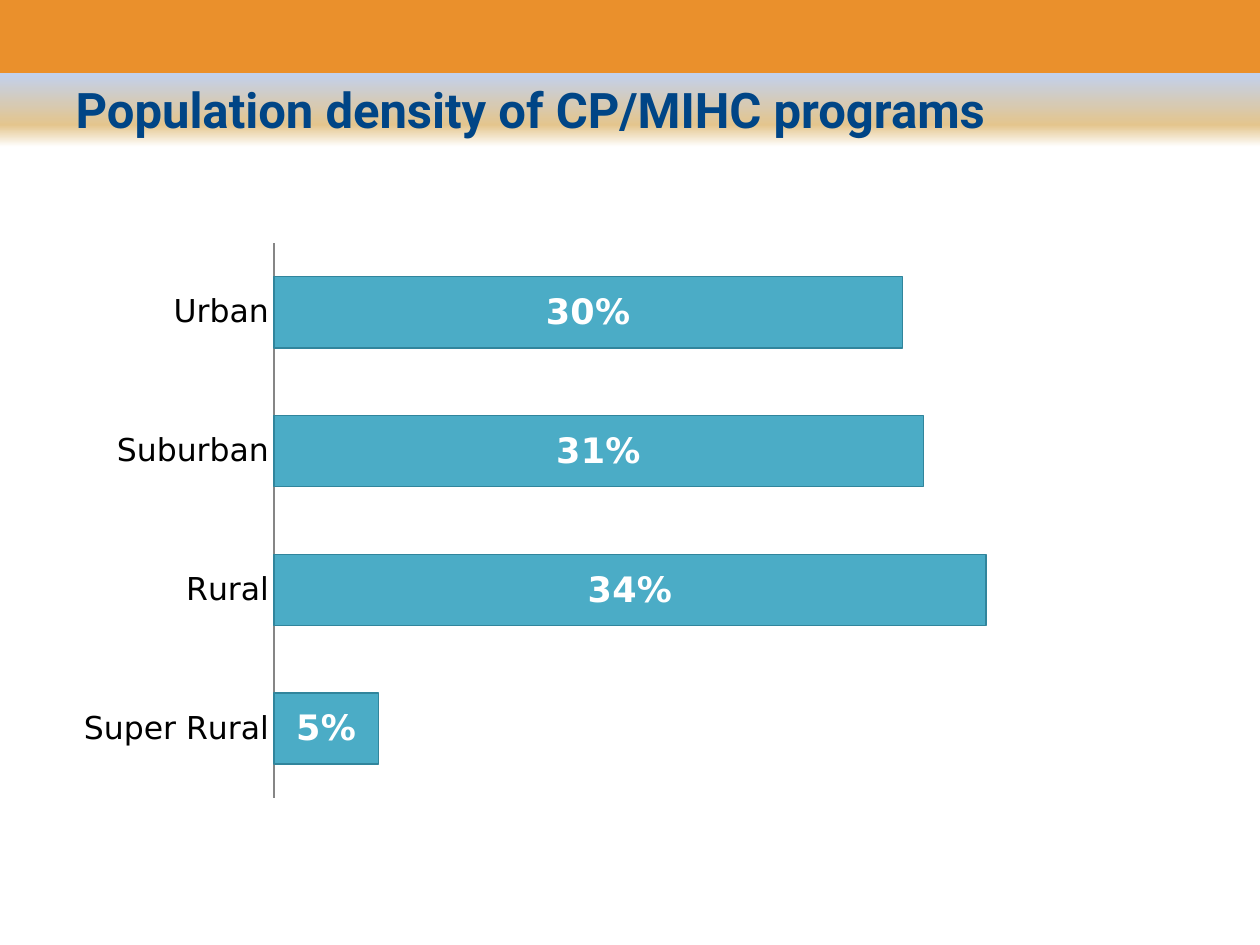
import lxml.etree
import pptx
import pptx.chart.data
import pptx.dml.color
import pptx.enum.chart
import pptx.enum.shapes
import pptx.enum.text
import pptx.oxml.ns
import pptx.util

EMU_PER_PX = 914400 / 126
SLIDE_WIDTH, SLIDE_HEIGHT = 1260, 945


def px(length):
    return pptx.util.Emu(round(length * EMU_PER_PX))


def color(hex_string):
    return pptx.dml.color.RGBColor.from_string(hex_string)


def add_child(parent, tag, **attributes):
    child = lxml.etree.SubElement(parent, pptx.oxml.ns.qn(tag))
    for name, value in attributes.items():
        child.set(name, str(value))
    return child


class SlideBuilder:
    title_font, title_size, title_color = "Roboto", 28, "004586"
    chart_font, label_size, value_size = "DejaVu Sans", 18, 20
    text_color, value_color = "000000", "FFFFFF"
    bar_fill, bar_line, axis_line = "4BACC6", "31859C", "868686"

    def __init__(self, presentation):
        self.slide = presentation.slides.add_slide(presentation.slide_layouts[5])

    def style_font(self, font, name, size, hex_string, bold=False):
        font.name = name
        font.size = pptx.util.Pt(size)
        font.bold = bold
        font.color.rgb = color(hex_string)

    def gradient_band(self, left, top, width, height, stops):
        """Add a vertical gradient band behind everything; stops are (percent, colour)."""
        band = self.slide.shapes.add_shape(
            pptx.enum.shapes.MSO_SHAPE.RECTANGLE, px(left), px(top), px(width), px(height))
        band.shadow.inherit = False
        band.line.fill.background()
        band.fill.gradient()
        band.fill.gradient_angle = 270
        stop_list = band._element.spPr.find(".//" + pptx.oxml.ns.qn("a:gsLst"))
        for old_stop in list(stop_list):
            stop_list.remove(old_stop)
        for percent, hex_string in stops:
            stop = add_child(stop_list, "a:gs", pos=percent * 1000)
            add_child(stop, "a:srgbClr", val=hex_string)
        self.slide.shapes._spTree.insert(2, band._element)

    def title(self, text, left, top, width, height):
        shape = self.slide.shapes.title
        shape.left, shape.top, shape.width, shape.height = map(px, (left, top, width, height))
        frame = shape.text_frame
        frame.text = text
        frame.word_wrap = True
        frame.vertical_anchor = pptx.enum.text.MSO_ANCHOR.TOP
        paragraph = frame.paragraphs[0]
        paragraph.alignment = pptx.enum.text.PP_ALIGN.LEFT
        self.style_font(paragraph.font, self.title_font, self.title_size, self.title_color, True)

    def bar_chart(self, left, top, width, height, shares, maximum, plot_area):
        """Add a bar chart; plot_area gives x, y, w, h as fractions of the chart."""
        data = pptx.chart.data.CategoryChartData(number_format="0%")
        data.categories = list(shares)
        data.add_series("Series 1", list(shares.values()))
        chart = self.slide.shapes.add_chart(
            pptx.enum.chart.XL_CHART_TYPE.BAR_STACKED,
            px(left), px(top), px(width), px(height), data).chart
        chart.has_legend = False
        chart.has_title = False
        self.style_font(chart.font, "Calibri", self.label_size, self.text_color)

        category_axis = chart.category_axis
        category_axis.major_tick_mark = pptx.enum.chart.XL_TICK_MARK.NONE
        category_axis.format.line.color.rgb = color(self.axis_line)
        category_axis.format.line.width = pptx.util.Pt(0.75)
        self.style_font(category_axis.tick_labels.font, self.chart_font,
                        self.label_size, self.text_color)
        value_axis = chart.value_axis
        value_axis.minimum_scale, value_axis.maximum_scale = 0, maximum
        value_axis.has_major_gridlines = False
        value_axis.visible = False

        plot = chart.plots[0]
        plot.gap_width, plot.overlap = 95, 100
        plot.vary_by_categories = False
        bars = plot.series[0]
        bars.format.fill.solid()
        bars.format.fill.fore_color.rgb = color(self.bar_fill)
        bars.format.line.color.rgb = color(self.bar_line)
        bars.format.line.width = pptx.util.Pt(0.75)
        labels = bars.data_labels
        labels.show_value = True
        labels.number_format, labels.number_format_is_linked = "0%", False
        labels.position = pptx.enum.chart.XL_LABEL_POSITION.CENTER
        self.style_font(labels.font, self.chart_font, self.value_size, self.value_color, True)
        self.place_plot(chart, plot_area)

    def place_plot(self, chart, plot_area):
        area = chart._chartSpace.chart.plotArea
        for old_layout in area.findall(pptx.oxml.ns.qn("c:layout")):
            area.remove(old_layout)
        layout = add_child(area, "c:layout")
        area.insert(0, layout)
        manual = add_child(layout, "c:manualLayout")
        add_child(manual, "c:layoutTarget", val="inner")
        for axis in "xy":
            add_child(manual, f"c:{axis}Mode", val="edge")
        for name, fraction in zip("xywh", plot_area):
            add_child(manual, f"c:{name}", val=round(fraction, 4))


def main():
    presentation = pptx.Presentation()
    presentation.slide_width = px(SLIDE_WIDTH)
    presentation.slide_height = px(SLIDE_HEIGHT)

    builder = SlideBuilder(presentation)
    builder.gradient_band(0, 0, SLIDE_WIDTH, 147, [
        (50, "EA902C"), (50, "C2D1ED"), (85, "E4C58D"), (100, "FFFFFF")])
    builder.title("Population density of CP/MIHC programs", 63, 73, 1134, 158)
    shares = {"Super Rural": 0.05, "Rural": 0.34, "Suburban": 0.31, "Urban": 0.3}
    width, height = 1071, 580
    plot_area = (211 / width, 12 / height, 838 / width, 555 / height)
    builder.bar_chart(63, 231, width, height, shares, 0.4, plot_area)
    presentation.save("out.pptx")


if __name__ == "__main__":
    main()
